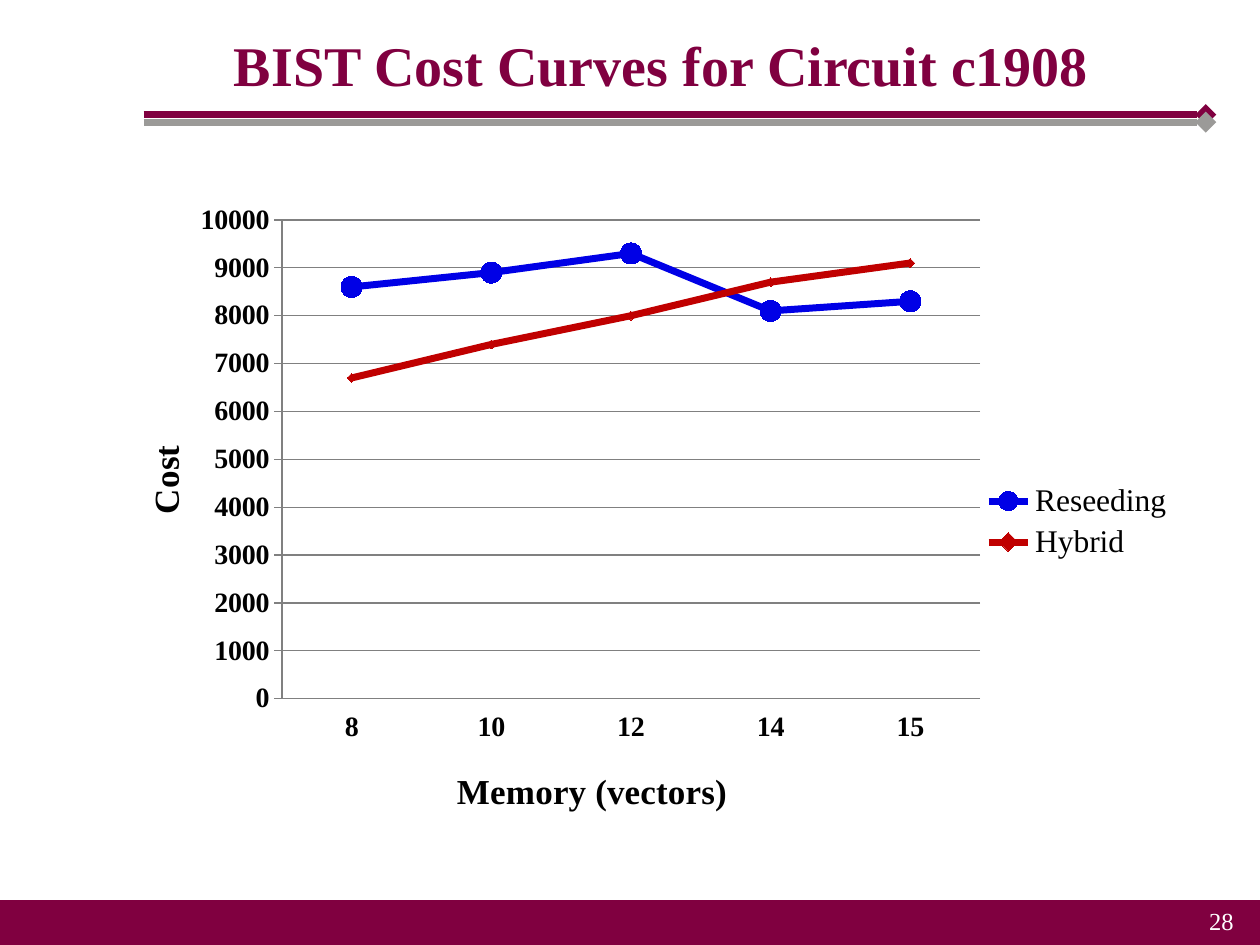
import pptx
import pptx.chart.data
import pptx.dml.color
import pptx.enum.chart
import pptx.enum.shapes
import pptx.enum.text
import pptx.oxml
import pptx.oxml.ns
import pptx.util
from pptx.util import Inches

COLORS = {"maroon": "800040", "gray": "9B9A98", "white": "FFFFFF", "black": "000000",
          "grid": "808080", "reseeding": "0000E6", "hybrid": "C00000"}
FONT = "Times New Roman"


def rgb(name):
    return pptx.dml.color.RGBColor.from_string(COLORS[name])


def format_font(font, size, color="black", bold=False):
    font.name = FONT
    font.size = pptx.util.Pt(size)
    font.bold = bold
    font.color.rgb = rgb(color)


def write_text(text_frame, text, align="CENTER", **font_format):
    paragraph = text_frame.paragraphs[0]
    paragraph.alignment = getattr(pptx.enum.text.PP_ALIGN, align)
    run = paragraph.add_run()
    run.text = text
    format_font(run.font, **font_format)


def place(element, after, x, y, width=None, height=None, inner=False):
    """Set a manual chart layout, given as fractions of the chart area."""
    for old in element.findall(pptx.oxml.ns.qn("c:layout")):
        element.remove(old)
    target = '<c:layoutTarget val="inner"/>' if inner else ""
    sizes = {"x": x, "y": y, "w": width, "h": height}
    modes = '<c:xMode val="edge"/><c:yMode val="edge"/>'
    values = "".join(f'<c:{key} val="{value}"/>' for key, value in sizes.items()
                     if value is not None)
    layout = pptx.oxml.parse_xml(
        f'<c:layout {pptx.oxml.ns.nsdecls("c")}><c:manualLayout>'
        f'{target}{modes}{values}</c:manualLayout></c:layout>')
    if after:
        element.find(pptx.oxml.ns.qn(after)).addnext(layout)
    else:
        element.insert(0, layout)


class SlideBuilder:
    def __init__(self, slide):
        self.slide = slide

    def rule(self, y, color):
        line = self.slide.shapes.add_connector(
            pptx.enum.shapes.MSO_CONNECTOR.STRAIGHT,
            Inches(1.14), Inches(y), Inches(9.57), Inches(y))
        line.line.color.rgb = rgb(color)
        line.line.width = pptx.util.Pt(4)
        namespace = pptx.oxml.ns.nsdecls("a")
        line.line._get_or_add_ln().append(
            pptx.oxml.parse_xml(f'<a:tailEnd {namespace} type="diamond"/>'))
        line._element.spPr.append(pptx.oxml.parse_xml(f"<a:effectLst {namespace}/>"))

    def bar(self, left, top, width, height, color):
        shape = self.slide.shapes.add_shape(
            pptx.enum.shapes.MSO_SHAPE.RECTANGLE,
            Inches(left), Inches(top), Inches(width), Inches(height))
        shape.shadow.inherit = False
        shape.fill.solid()
        shape.fill.fore_color.rgb = rgb(color)
        shape.line.color.rgb = rgb(color)
        shape.line.width = pptx.util.Pt(0.75)

    def text(self, left, top, width, height, text, anchor="TOP", **text_format):
        box = self.slide.shapes.add_textbox(
            Inches(left), Inches(top), Inches(width), Inches(height))
        box.text_frame.word_wrap = True
        box.text_frame.vertical_anchor = getattr(pptx.enum.text.MSO_ANCHOR, anchor)
        write_text(box.text_frame, text, **text_format)

    def axis(self, axis, title, x, y):
        write_text(axis.axis_title.text_frame, title, size=20, bold=True)
        place(axis.axis_title._element, "c:tx", x, y)
        format_font(axis.tick_labels.font, 16, bold=True)
        axis.format.line.color.rgb = rgb("grid")
        axis.minor_tick_mark = pptx.enum.chart.XL_TICK_MARK.NONE

    def line_chart(self, left, top, width, height, categories, series):
        data = pptx.chart.data.CategoryChartData()
        data.categories = categories
        for name, values, *_ in series:
            data.add_series(name, values)
        chart = self.slide.shapes.add_chart(
            pptx.enum.chart.XL_CHART_TYPE.LINE_MARKERS,
            Inches(left), Inches(top), Inches(width), Inches(height), data).chart
        chart.has_title = False
        format_font(chart.font, 10)
        place(chart._chartSpace.chart.plotArea, None, 0.164, 0.025, 0.646, 0.754, True)

        # Axes
        self.axis(chart.category_axis, "Memory (vectors)", 0.32, 0.88)
        chart.category_axis.major_tick_mark = pptx.enum.chart.XL_TICK_MARK.NONE
        chart.category_axis.tick_label_position = pptx.enum.chart.XL_TICK_LABEL_POSITION.LOW
        value_axis = chart.value_axis
        self.axis(value_axis, "Cost", 0.03, 0.37)
        value_axis.minimum_scale, value_axis.maximum_scale = 0, 10000
        value_axis.major_unit = 1000
        value_axis.major_tick_mark = pptx.enum.chart.XL_TICK_MARK.CROSS
        value_axis.major_gridlines.format.line.color.rgb = rgb("grid")

        # Legend
        chart.has_legend = True
        chart.legend.position = pptx.enum.chart.XL_LEGEND_POSITION.RIGHT
        chart.legend.include_in_layout = False
        format_font(chart.legend.font, 18)
        place(chart.legend._element, "c:legendPos", 0.81, 0.43, 0.18, 0.14)

        # Series
        plot = chart.plots[0]
        plot.vary_by_categories = False
        for line, (_, _, color, marker, size) in zip(plot.series, series):
            line.smooth = False
            line.format.line.color.rgb = rgb(color)
            line.format.line.width = pptx.util.Pt(4)
            line.marker.style = getattr(pptx.enum.chart.XL_MARKER_STYLE, marker)
            line.marker.size = size
            line.marker.format.fill.solid()
            line.marker.format.fill.fore_color.rgb = rgb(color)
            line.marker.format.line.color.rgb = rgb(color)


def main():
    presentation = pptx.Presentation()
    presentation.slide_width = Inches(10)
    presentation.slide_height = Inches(7.5)
    builder = SlideBuilder(presentation.slides.add_slide(presentation.slide_layouts[6]))

    # Frame
    builder.rule(0.91, "maroon")
    builder.rule(0.97, "gray")
    builder.bar(0, 7.15, 10, 0.36, "maroon")

    # Title and page number
    builder.text(0.75, 0, 9, 1.01, "BIST Cost Curves for Circuit c1908",
                 anchor="MIDDLE", size=32, color="maroon", bold=True)
    builder.text(8.62, 7.14, 1.27, 0.52, "28", align="RIGHT", size=14, color="white")

    # Cost curves
    builder.line_chart(0.83, 1.62, 8.58, 5.04, ["8", "10", "12", "14", "15"], [
        ("Reseeding", [8600, 8900, 9300, 8100, 8300], "reseeding", "CIRCLE", 12),
        ("Hybrid", [6700, 7400, 8000, 8700, 9100], "hybrid", "DIAMOND", 5),
    ])
    presentation.save("out.pptx")


if __name__ == "__main__":
    main()
